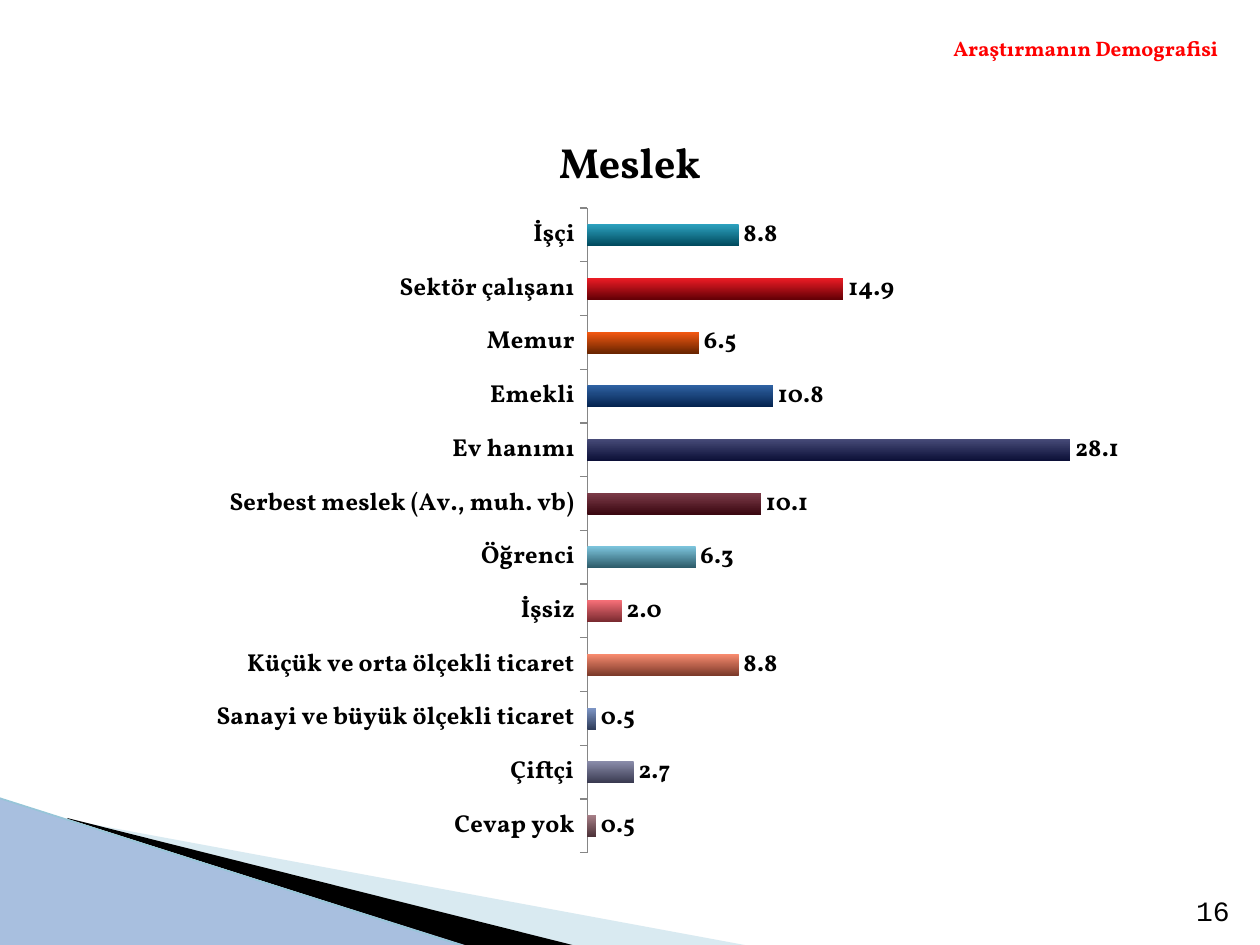
from lxml import etree
from pptx import Presentation
from pptx.chart.data import CategoryChartData
from pptx.dml.color import RGBColor
from pptx.enum.chart import XL_CHART_TYPE, XL_LABEL_POSITION, XL_TICK_LABEL_POSITION, XL_TICK_MARK
from pptx.enum.shapes import MSO_CONNECTOR, MSO_SHAPE
from pptx.enum.text import MSO_ANCHOR, PP_ALIGN
from pptx.oxml import parse_xml
from pptx.oxml.ns import nsdecls, qn
from pptx.util import Pt

PX = 914400 / 126
FONT = "Vollkorn"

# category, value, colour at the top of the bar, colour at the bottom
JOBS = [
    ("İşçi", 8.8, "2DA2BF", "004A5E"),
    ("Sektör çalışanı", 14.9, "EE1C25", "650006"),
    ("Memur", 6.5, "F85A12", "6A2500"),
    ("Emekli", 10.8, "2F62A3", "04234F"),
    ("Ev hanımı", 28.1, "474B78", "0C1038"),
    ("Serbest meslek (Av., muh. vb)", 10.1, "7D3C4A", "3A0710"),
    ("Öğrenci", 6.3, "7CC4DC", "2C5A68"),
    ("İşsiz", 2.0, "F77078", "7A2A30"),
    ("Küçük ve orta ölçekli ticaret", 8.8, "FA8C70", "7C3A2A"),
    ("Sanayi ve büyük ölçekli ticaret", 0.5, "8098C8", "303E5C"),
    ("Çiftçi", 2.7, "8A8CAA", "393A50"),
    ("Cevap yok", 0.5, "A88088", "4C3238"),
]
# text, box, size, font, colour, bold, alignment, anchor
TEXTS = [
    ("Meslek", (63, 108, 1134, 108), 24, FONT, "000000", True, PP_ALIGN.CENTER, MSO_ANCHOR.MIDDLE),
    ("Araştırmanın Demografisi", (108, 29, 1123, 38), 12, FONT, "FF0000", True, PP_ALIGN.RIGHT, MSO_ANCHOR.TOP),
    ("16", (1152, 883, 90, 50), 16, "Courier New", "000000", False, PP_ALIGN.RIGHT, MSO_ANCHOR.BOTTOM),
]
# outline, colour, opacity in percent
WEDGES = [
    ([(69, 820), (750, 946), (575, 946), (69, 819)], "A0CBDC", 40),
    ([(67, 818), (576, 946), (469, 947), (68, 819)], "000000", 100),
]
TRIANGLE = (-1, 798, 469, 148)
EDGE = (-1, 798, 467, 947)
CHART = (134, 189, 992, 683)
PLOT = {"x": 0.457, "y": 0.028, "w": 0.52, "h": 0.944}


def px(*lengths):
    return [round(n * PX) for n in lengths]


def rgb(value):
    return RGBColor.from_string(value)


def paint(sp, color, opacity=100):
    sp.shadow.inherit = False
    sp.fill.solid()
    sp.fill.fore_color.rgb = rgb(color)
    sp.line.fill.background()
    if opacity < 100:
        clr = sp.fill._xPr.find(".//" + qn("a:srgbClr"))
        etree.SubElement(clr, qn("a:alpha"), val=str(opacity * 1000))


def add_corner(shapes):
    for points, color, opacity in WEDGES:
        builder = shapes.build_freeform(*points[0], scale=PX)
        builder.add_line_segments(points[1:], close=True)
        paint(builder.convert_to_shape(), color, opacity)
    paint(shapes.add_shape(MSO_SHAPE.RIGHT_TRIANGLE, *px(*TRIANGLE)), "A8BFDF")
    edge = shapes.add_connector(MSO_CONNECTOR.STRAIGHT, *px(*EDGE))
    edge.line.color.rgb = rgb("97C5D8")
    edge.line.width = Pt(0.95)
    etree.SubElement(edge._element.spPr, qn("a:effectLst"))


def add_text(shapes, text, box, size, font, color, bold, align, anchor):
    tf = shapes.add_textbox(*px(*box)).text_frame
    tf.word_wrap = True
    tf.vertical_anchor = anchor
    p = tf.paragraphs[0]
    p.text = text
    p.alignment = align
    p.font.size = Pt(size)
    p.font.name = font
    p.font.bold = bold
    p.font.color.rgb = rgb(color)


def place_plot(chart):
    """Fix the inner plot area as fractions of the chart."""
    sizes = "".join(f'<c:{k} val="{v}"/>' for k, v in PLOT.items())
    layout = parse_xml(
        f'<c:layout {nsdecls("c")}><c:manualLayout><c:layoutTarget val="inner"/>'
        f'<c:xMode val="edge"/><c:yMode val="edge"/>{sizes}</c:manualLayout></c:layout>')
    area = chart._chartSpace.chart.plotArea
    for old in area.findall(qn("c:layout")):
        area.remove(old)
    area.insert(0, layout)


def add_job_chart(shapes):
    data = CategoryChartData(number_format="0.0")
    data.categories = [job[0] for job in JOBS]
    data.add_series("Series 1", [job[1] for job in JOBS])
    chart = shapes.add_chart(XL_CHART_TYPE.BAR_CLUSTERED, *px(*CHART), data).chart
    chart.has_legend = False
    chart.has_title = False
    chart.font.size = Pt(14)
    chart.font.name = FONT
    chart.font.bold = True
    chart.font.color.rgb = rgb("000000")
    place_plot(chart)

    cat = chart.category_axis
    cat.reverse_order = True
    cat.major_tick_mark = XL_TICK_MARK.OUTSIDE
    cat.tick_label_position = XL_TICK_LABEL_POSITION.LOW
    cat.format.line.color.rgb = rgb("868686")
    val = chart.value_axis
    val.visible = False
    val.has_major_gridlines = False
    val.minimum_scale, val.maximum_scale = 0, 30

    plot = chart.plots[0]
    plot.gap_width = 150
    plot.vary_by_categories = False
    plot.has_data_labels = True
    labels = plot.data_labels
    labels.show_value = True
    labels.number_format = "0.0"
    labels.number_format_is_linked = False
    labels.position = XL_LABEL_POSITION.OUTSIDE_END
    for i, (_, _, top, bottom) in enumerate(JOBS):
        fill = plot.series[0].points[i].format.fill
        fill.gradient()
        fill.gradient_angle = 270
        for stop, color in zip(fill.gradient_stops, (top, bottom)):
            stop.color.rgb = rgb(color)


def main():
    prs = Presentation()
    prs.slide_width, prs.slide_height = px(1260, 945)
    shapes = prs.slides.add_slide(prs.slide_layouts[6]).shapes
    add_corner(shapes)
    for text in TEXTS:
        add_text(shapes, *text)
    add_job_chart(shapes)
    prs.save("out.pptx")


if __name__ == "__main__":
    main()
